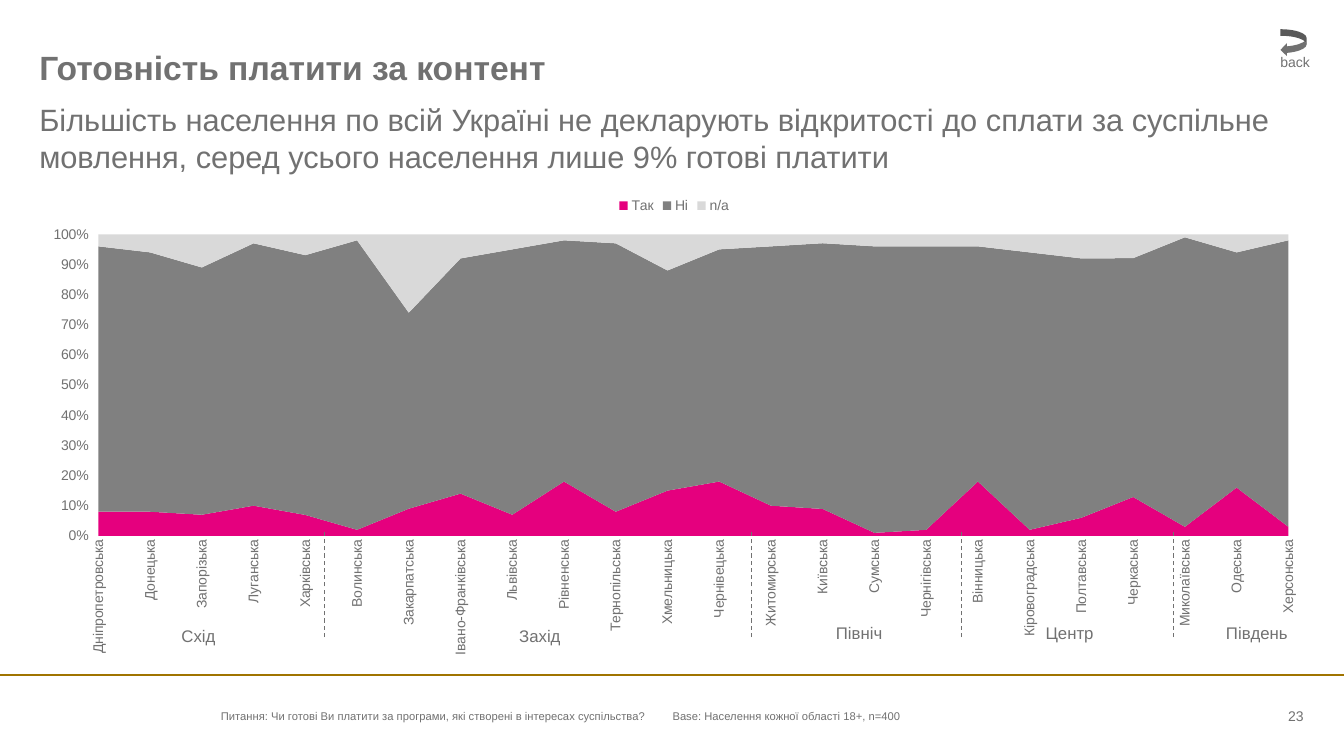
from dataclasses import dataclass

from lxml.etree import SubElement
from pptx import Presentation
from pptx.chart.data import CategoryChartData
from pptx.dml.color import RGBColor
from pptx.enum.chart import XL_CHART_TYPE, XL_LEGEND_POSITION, XL_TICK_MARK
from pptx.enum.dml import MSO_LINE
from pptx.enum.shapes import MSO_CONNECTOR, MSO_SHAPE
from pptx.enum.text import MSO_ANCHOR, PP_ALIGN
from pptx.oxml import parse_xml
from pptx.oxml.ns import nsdecls, qn
from pptx.util import Inches, Pt


@dataclass(frozen=True)
class Theme:
    """Colours and type sizes of the slide."""
    font: str = "Arial"
    text: str = "717171"
    rule: str = "A07400"
    series: tuple = ("E5007E", "808080", "D9D9D9")
    title: int = 24
    subtitle: int = 22
    region: int = 12
    small: int = 10
    note: int = 8


THEME = Theme()

ANSWERS = ("Так", "Ні", "n/a")
OBLASTS = (
    ("Дніпропетровська", 8, 88, 4),
    ("Донецька", 8, 86, 6),
    ("Запорізька", 7, 82, 11),
    ("Луганська", 10, 87, 3),
    ("Харківська", 7, 87, 7),
    ("Волинська", 2, 96, 2),
    ("Закарпатська", 9, 65, 26),
    ("Івано-Франківська", 14, 78, 8),
    ("Львівська", 7, 88, 5),
    ("Рівненська", 18, 80, 2),
    ("Тернопільська", 8, 89, 3),
    ("Хмельницька", 15, 73, 12),
    ("Чернівецька", 18, 77, 5),
    ("Житомирська", 10, 86, 4),
    ("Київська", 9, 89, 3),
    ("Сумська", 1, 95, 4),
    ("Чернігівська", 2, 94, 4),
    ("Вінницька", 18, 78, 4),
    ("Кіровоградська", 2, 92, 6),
    ("Полтавська", 6, 86, 8),
    ("Черкаська", 13, 80, 8),
    ("Миколаївська", 3, 96, 1),
    ("Одеська", 16, 78, 6),
    ("Херсонська", 3, 95, 2),
)
REGIONS = (
    ("Схід", 1.53, 0.03),
    ("Захід", 4.88, 0.03),
    ("Північ", 8.02, 0),
    ("Центр", 10.1, 0),
    ("Південь", 11.89, 0),
)
DIVIDERS = (2.95, 7.18, 9.27, 11.37)


def set_attrs(obj, values):
    """Set each attribute of an object from a dict."""
    for name, value in values.items():
        setattr(obj, name, value)


def style_font(font, size, bold=False):
    """Give a font the theme face and colour."""
    set_attrs(font, {"name": THEME.font, "size": Pt(size), "bold": bold})
    font.color.rgb = RGBColor.from_string(THEME.text)


def add_text(s, box, text, size, bold=False, align=PP_ALIGN.LEFT,
             anchor=MSO_ANCHOR.TOP):
    """Add a text box without insets."""
    tf = s.shapes.add_textbox(*map(Inches, box)).text_frame
    set_attrs(tf, {"margin_left": 0, "margin_right": 0, "margin_top": 0,
                   "margin_bottom": 0, "word_wrap": True,
                   "vertical_anchor": anchor})
    p = tf.paragraphs[0]
    p.alignment = align
    r = p.add_run()
    r.text = text
    style_font(r.font, size, bold)


def add_line(s, start, end, color, width, dash=None):
    """Add a straight line without a shadow."""
    sp = s.shapes.add_connector(MSO_CONNECTOR.STRAIGHT,
                                *map(Inches, start + end))
    sp.line.color.rgb = RGBColor.from_string(color)
    set_attrs(sp.line, {"width": Pt(width), "dash_style": dash})
    SubElement(sp._element.spPr, qn("a:effectLst"))


def add_heading(s, x, y, w):
    """Place the title and the statement below it."""
    add_text(s, (x, y, w, 0.44), "Готовність платити за контент",
             THEME.title, bold=True, anchor=MSO_ANCHOR.BOTTOM)
    add_text(s, (x, y + 0.57, w, 0.8),
             "Більшість населення по всій Україні не декларують відкритості "
             "до сплати за суспільне мовлення, серед усього населення "
             "лише 9% готові платити", THEME.subtitle)


def add_back_button(s, x, y):
    """Place the return arrow and its label."""
    sp = s.shapes.add_shape(MSO_SHAPE.CURVED_LEFT_ARROW,
                            *map(Inches, (x, y, 0.26, 0.27)))
    sp.shadow.inherit = False
    sp.fill.solid()
    sp.fill.fore_color.rgb = RGBColor.from_string(THEME.text)
    sp.line.fill.background()
    add_text(s, (x, y + 0.24, 0.45, 0.17), "back", THEME.small)


def fix_plot_area(chart, x, y, w, h):
    """Fix the inner plot area as fractions of the chart."""
    plot = chart._chartSpace.chart.plotArea
    for old in plot.findall(qn("c:layout")):
        plot.remove(old)
    sizes = "".join(f'<c:{k} val="{v}"/>' for k, v in
                    {"x": x, "y": y, "w": w, "h": h}.items())
    plot.insert(0, parse_xml(
        f'<c:layout {nsdecls("c")}><c:manualLayout>'
        '<c:layoutTarget val="inner"/><c:xMode val="edge"/>'
        f'<c:yMode val="edge"/>{sizes}</c:manualLayout></c:layout>'))


def add_oblast_chart(s, x, y, w, h):
    """Place the stacked area chart of answers by oblast."""
    names, *columns = zip(*OBLASTS)
    data = CategoryChartData(number_format="0")
    data.categories = names
    for answer, values in zip(ANSWERS, columns):
        data.add_series(answer, values)
    chart = s.shapes.add_chart(XL_CHART_TYPE.AREA_STACKED_100,
                               *map(Inches, (x, y, w, h)), data).chart
    set_attrs(chart, {"has_title": False, "has_legend": True})
    style_font(chart.font, THEME.small)
    set_attrs(chart.legend, {"position": XL_LEGEND_POSITION.TOP,
                             "include_in_layout": False})
    style_font(chart.legend.font, THEME.small)
    for series, color in zip(chart.plots[0].series, THEME.series):
        series.format.fill.solid()
        series.format.fill.fore_color.rgb = RGBColor.from_string(color)
        series.format.line.fill.background()
    for axis, tick in ((chart.category_axis, XL_TICK_MARK.NONE),
                       (chart.value_axis, XL_TICK_MARK.OUTSIDE)):
        set_attrs(axis, {"has_major_gridlines": False,
                         "major_tick_mark": tick,
                         "minor_tick_mark": XL_TICK_MARK.NONE})
        axis.format.line.fill.background()
        style_font(axis.tick_labels.font, THEME.small)
    set_attrs(chart.value_axis, {"minimum_scale": 0, "maximum_scale": 1,
                                 "major_unit": 0.1})
    set_attrs(chart.value_axis.tick_labels,
              {"number_format": "0%", "number_format_is_linked": False})
    body = chart.category_axis._element.find(qn("c:txPr")).find(qn("a:bodyPr"))
    body.set("rot", "-5400000")
    body.set("vert", "horz")
    fix_plot_area(chart, 0.055, 0.1, 0.92, 0.63)


def add_regions(s, x, y):
    """Place the region names and the dashed lines between them."""
    for dx in DIVIDERS:
        add_line(s, (x + dx, y + 1.06), (x + dx, y), THEME.text, 0.75,
                 MSO_LINE.DASH)
    for name, dx, dy in REGIONS:
        add_text(s, (x + dx, y + 0.92 + dy, 0.8, 0.2), name, THEME.region)


def add_footer(s, y, w):
    """Place the rule, the question, the base and the page number."""
    add_line(s, (0, y), (w, y), THEME.rule, 1.5)
    top, middle = y + 0.29, MSO_ANCHOR.MIDDLE
    add_text(s, (2.19, top, 4.4, 0.22),
             "Питання: Чи готові Ви платити за програми, які створені "
             "в інтересах суспільства?", THEME.note, anchor=middle)
    add_text(s, (6.67, top, 5.11, 0.22),
             "Base: Населення кожної області 18+, n=400", THEME.note,
             anchor=middle)
    add_text(s, (11.87, top, 1.06, 0.22), "23", THEME.small,
             align=PP_ALIGN.RIGHT, anchor=middle)


def main():
    """Build the slide and save it."""
    prs = Presentation()
    set_attrs(prs, {"slide_width": Inches(13.33), "slide_height": Inches(7.5)})
    s = prs.slides.add_slide(prs.slide_layouts[6])
    add_heading(s, 0.39, 0.43, 12.54)
    add_oblast_chart(s, 0.27, 1.85, 12.83, 4.75)
    add_regions(s, 0.27, 5.26)
    add_back_button(s, 12.7, 0.29)
    add_footer(s, 6.7, 13.33)
    prs.save("out.pptx")


if __name__ == "__main__":
    main()
